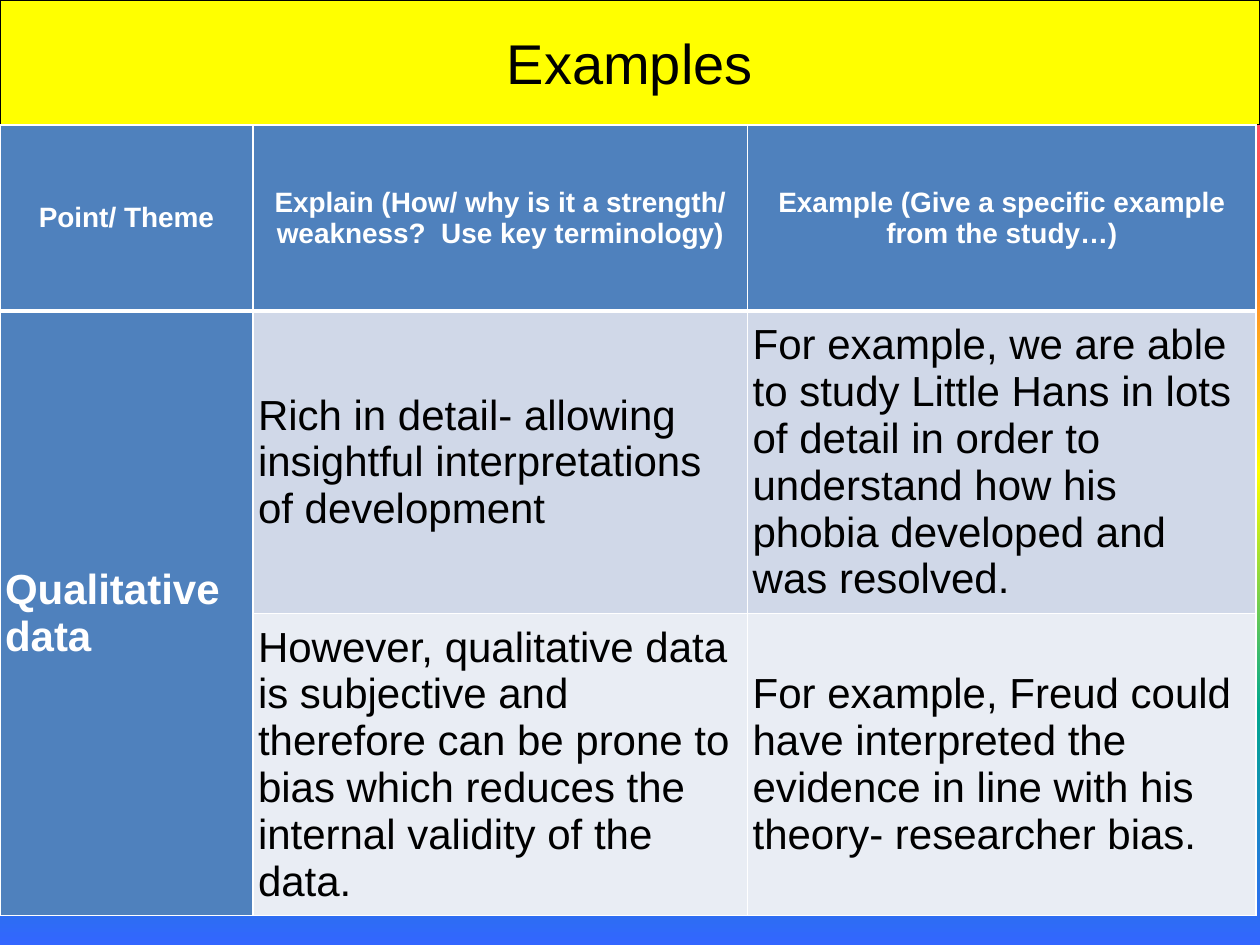
from lxml import etree
from pptx import Presentation
from pptx.dml.color import RGBColor
from pptx.enum.text import MSO_ANCHOR, PP_ALIGN
from pptx.oxml.ns import qn
from pptx.util import Inches, Pt

MID = MSO_ANCHOR.MIDDLE
LEFT, CENTER = PP_ALIGN.LEFT, PP_ALIGN.CENTER
WIDE, HIGH = Inches(10), Inches(7.5)
HEX = {"band": "FFFF00", "ink": "000000", "white": "FFFFFF", "head": "4F81BD",
       "odd": "D0D8E8", "even": "E9EDF4"}
GLOW = ["FF3399", "FF6633", "FFFF00", "01A78F", "3366FF"]
COLS = [2.01, 3.93, 4.04]
ROWS = [1.48, 2.4, 2.4]
CELLS = [
    ["Point/ Theme",
     "Explain (How/ why is it a strength/ weakness?  Use key terminology)",
     "Example (Give a specific example from the study…)"],
    ["Qualitative data",
     "Rich in detail- allowing insightful interpretations of development",
     "For example, we are able to study Little Hans in lots of detail in order "
     "to understand how his phobia developed and was resolved."],
    ["",
     "However, qualitative data is subjective and therefore can be prone to bias "
     "which reduces the internal validity of the data.",
     "For example, Freud could have interpreted the evidence in line with his "
     "theory- researcher bias."],
]


def paint(fill, name):
    fill.solid()
    fill.fore_color.rgb = RGBColor.from_string(HEX[name])


def write(frame, text, size=24, color="ink", bold=False, align=LEFT):
    para = frame.paragraphs[0]
    para.alignment = align
    run = para.add_run()
    run.text = text
    run.font.name = "Arial"
    run.font.size = Pt(size)
    run.font.bold = bold
    run.font.color.rgb = RGBColor.from_string(HEX[color])


def add_solid(node, value):
    solid = etree.SubElement(node, qn("a:solidFill"))
    etree.SubElement(solid, qn("a:srgbClr"), val=value)


def edge(cell, top, base):
    props = cell._tc.get_or_add_tcPr()
    for i, (side, width) in enumerate(zip("LRTB", (1, 1, top, base))):
        line = etree.Element(qn("a:ln" + side), w=str(Pt(width)))
        add_solid(line, HEX["white"])
        props.insert(i, line)


def backdrop(slide):
    fill = slide.background.fill
    fill.gradient()
    fill.gradient_angle = 270
    stops = slide.element.find(".//" + qn("a:gsLst"))
    for old in list(stops):
        stops.remove(old)
    for i, value in enumerate(GLOW):
        stop = etree.SubElement(stops, qn("a:gs"), pos=str(i * 25000))
        etree.SubElement(stop, qn("a:srgbClr"), val=value)


def banner(slide, left, top, width, height):
    title = slide.shapes.title
    title.left, title.top, title.width, title.height = left, top, width, height
    paint(title.fill, "band")
    title.line.color.rgb = RGBColor.from_string(HEX["ink"])
    title.line.width = Pt(0.75)
    title.text_frame.vertical_anchor = MID
    write(title.text_frame, "Examples", size=32, align=CENTER)


def grid(slide, left, top, width, height):
    table = slide.shapes.add_table(len(ROWS), len(COLS), left, top, width, height).table
    for col, share in zip(table.columns, COLS):
        col.width = int(width * share / sum(COLS))
    for row, share in zip(table.rows, ROWS):
        row.height = int(height * share / sum(ROWS))
    for r, texts in enumerate(CELLS):
        for c, text in enumerate(texts):
            cell = table.cell(r, c)
            head = r == 0 or c == 0
            paint(cell.fill, "head" if head else ("odd" if r == 1 else "even"))
            edge(cell, 3 if r == 1 else 1, 3 if r == 0 else 1)
            cell.vertical_anchor = MID
            cell.margin_left = cell.margin_right = Inches(0.04)
            cell.margin_top = cell.margin_bottom = 0
            if text:
                write(cell.text_frame, text, size=16 if r == 0 else 24,
                      color="white" if head else "ink", bold=head,
                      align=CENTER if r == 0 else LEFT)
    table.cell(1, 0).merge(table.cell(2, 0))


def main():
    deck = Presentation()
    deck.slide_width, deck.slide_height = WIDE, HIGH
    slide = deck.slides.add_slide(deck.slide_layouts[5])
    split = int(HIGH * 0.132)
    backdrop(slide)
    banner(slide, 0, 0, WIDE, split)
    grid(slide, 0, split, int(WIDE * 0.997), int(HIGH * 0.837))
    deck.save("out.pptx")


if __name__ == "__main__":
    main()
